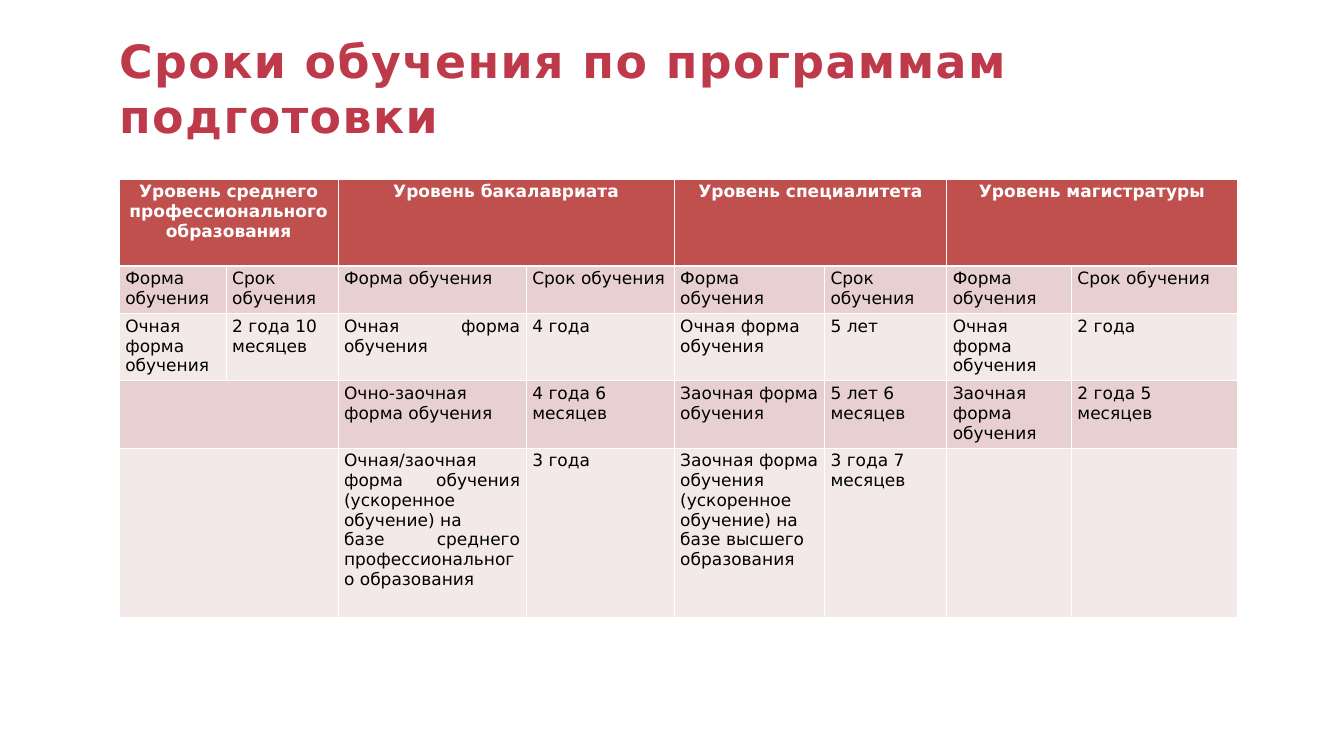
from lxml.etree import SubElement
from pptx import Presentation
from pptx.dml.color import RGBColor
from pptx.enum.text import MSO_ANCHOR, PP_ALIGN
from pptx.oxml.ns import qn
from pptx.util import Inches, Pt

COLORS = {
    "title": "BE3949",
    "header": "C0504D",
    "dark_band": "E8D0D0",
    "light_band": "F4E9E9",
    "white": "FFFFFF",
    "black": "000000",
}
COLUMN_WIDTHS = [1.75, 1.83, 3.08, 2.42, 2.46, 2, 2.04, 2.71]
ROW_HEIGHTS = [1.42, 0.78, 1.1, 1.1, 2.77]
JUSTIFIED_COLUMN = 2
FORM, TERM = "Форма обучения", "Срок обучения"
FULL_TIME, PART_TIME = "Очная форма обучения", "Заочная форма обучения"
STUDY_TERMS = [
    ["Уровень среднего профессионального образования", "",
     "Уровень бакалавриата", "",
     "Уровень специалитета", "",
     "Уровень магистратуры", ""],
    [FORM, TERM] * 4,
    [FULL_TIME, "2 года 10 месяцев", FULL_TIME, "4 года",
     FULL_TIME, "5 лет", FULL_TIME, "2 года"],
    ["", "", "Очно-заочная форма обучения", "4 года 6 месяцев",
     PART_TIME, "5 лет 6 месяцев", PART_TIME, "2 года 5 месяцев"],
    ["", "",
     "Очная/заочная форма обучения (ускоренное обучение) на\n"
     "базе среднего профессионального образования", "3 года",
     "Заочная форма обучения (ускоренное обучение) на базе высшего образования",
     "3 года 7 месяцев", "", ""],
]
MERGED_PAIRS = [(0, 0), (0, 2), (0, 4), (0, 6), (3, 0), (4, 0)]


class SlideBuilder:
    font_name = "DejaVu Sans"

    def __init__(self, slide):
        self.slide = slide

    def color(self, name):
        return RGBColor.from_string(COLORS[name])

    def style_text(self, text_frame, size, color, bold, alignment):
        for paragraph in text_frame.paragraphs:
            paragraph.alignment = alignment
            for run in paragraph.runs:
                run.font.name = self.font_name
                run.font.size = Pt(size)
                run.font.bold = bold
                run.font.color.rgb = self.color(color)

    def add_title(self, text, left, top, width, height):
        shape = self.slide.shapes.add_textbox(
            Inches(left), Inches(top), Inches(width), Inches(height))
        text_frame = shape.text_frame
        text_frame.word_wrap = True
        text_frame.vertical_anchor = MSO_ANCHOR.TOP
        text_frame.margin_left = text_frame.margin_right = 0
        text_frame.margin_top = Inches(0.01)
        text_frame.margin_bottom = 0
        text_frame.text = text
        self.style_text(text_frame, 54, "title", True, PP_ALIGN.LEFT)
        run = text_frame.paragraphs[0].runs[0]
        run.font._element.set("spc", "170")

    def add_borders(self, cell, top_width, bottom_width):
        properties = cell._tc.get_or_add_tcPr()
        widths = {"L": 1, "R": 1, "T": top_width, "B": bottom_width}
        for side, width in widths.items():
            line = SubElement(properties, qn(f"a:ln{side}"), w=str(Pt(width)))
            fill = SubElement(line, qn("a:solidFill"))
            SubElement(fill, qn("a:srgbClr"), val=COLORS["white"])

    def add_cell(self, cell, text, row, column):
        is_header = row == 0
        self.add_borders(cell, 3 if row == 1 else 1, 3 if is_header else 1)
        band = "dark_band" if row % 2 else "light_band"
        cell.fill.solid()
        cell.fill.fore_color.rgb = self.color("header" if is_header else band)
        if not text:
            return
        alignment = PP_ALIGN.LEFT
        if is_header:
            alignment = PP_ALIGN.CENTER
        elif column == JUSTIFIED_COLUMN:
            alignment = PP_ALIGN.JUSTIFY
        cell.text_frame.text = text
        self.style_text(cell.text_frame, 20, "white" if is_header else "black",
                        is_header, alignment)

    def add_table(self, rows, left, top):
        table = self.slide.shapes.add_table(
            len(ROW_HEIGHTS), len(COLUMN_WIDTHS), Inches(left), Inches(top),
            Inches(sum(COLUMN_WIDTHS)), Inches(sum(ROW_HEIGHTS))).table
        for column, width in zip(table.columns, COLUMN_WIDTHS):
            column.width = Inches(width)
        for row, height in zip(table.rows, ROW_HEIGHTS):
            row.height = Inches(height)
        for row, texts in enumerate(rows):
            for column, text in enumerate(texts):
                self.add_cell(table.cell(row, column), text, row, column)
        for row, column in MERGED_PAIRS:
            table.cell(row, column).merge(table.cell(row, column + 1))


def main():
    presentation = Presentation()
    presentation.slide_width = Inches(21.99)
    presentation.slide_height = Inches(12.37)
    slide = presentation.slides.add_slide(presentation.slide_layouts[6])
    builder = SlideBuilder(slide)
    builder.add_title("Сроки обучения по программам подготовки",
                      1.95, 0.53, 15.42, 1.83)
    builder.add_table(STUDY_TERMS, 1.95, 2.93)
    presentation.save("out.pptx")


if __name__ == "__main__":
    main()
